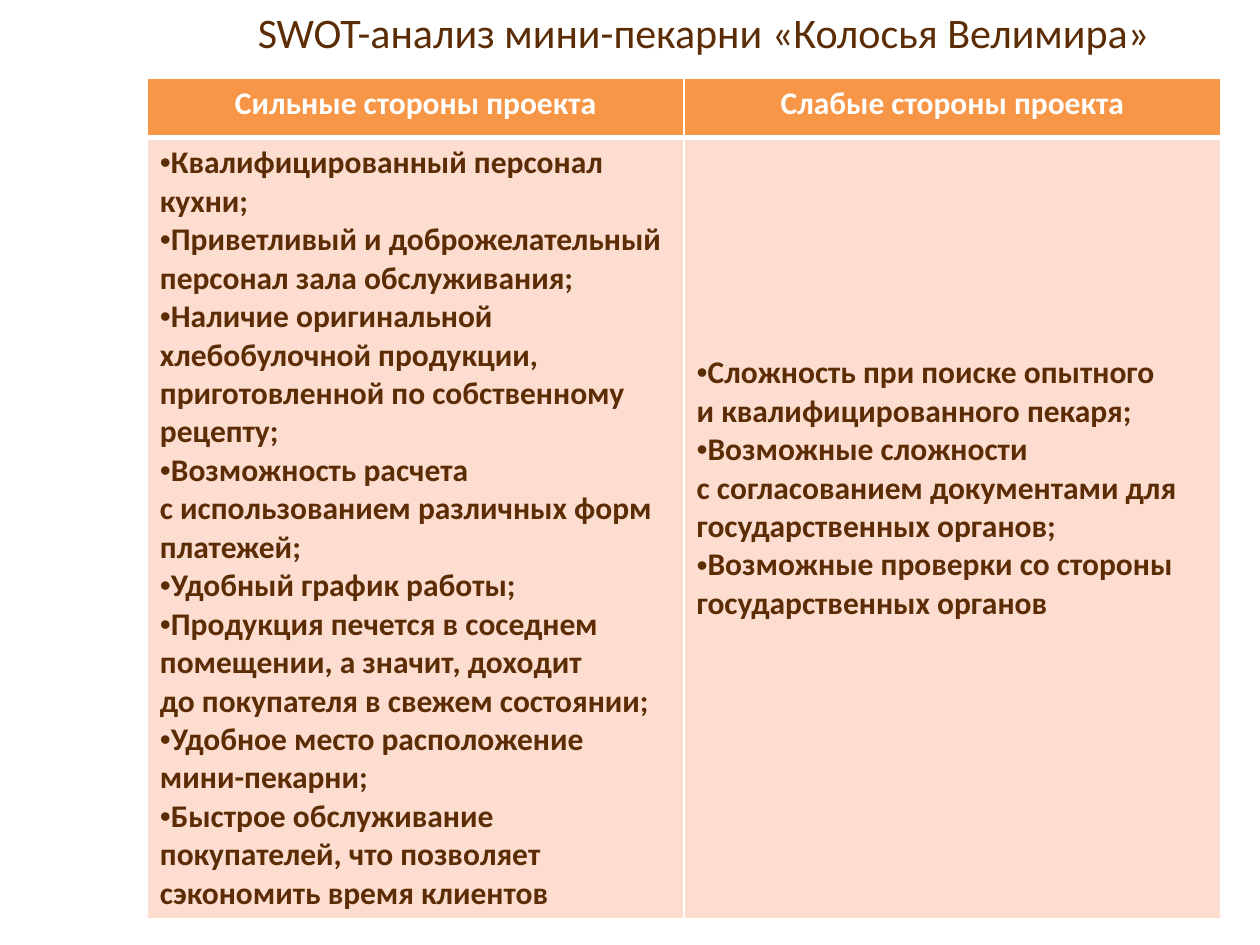
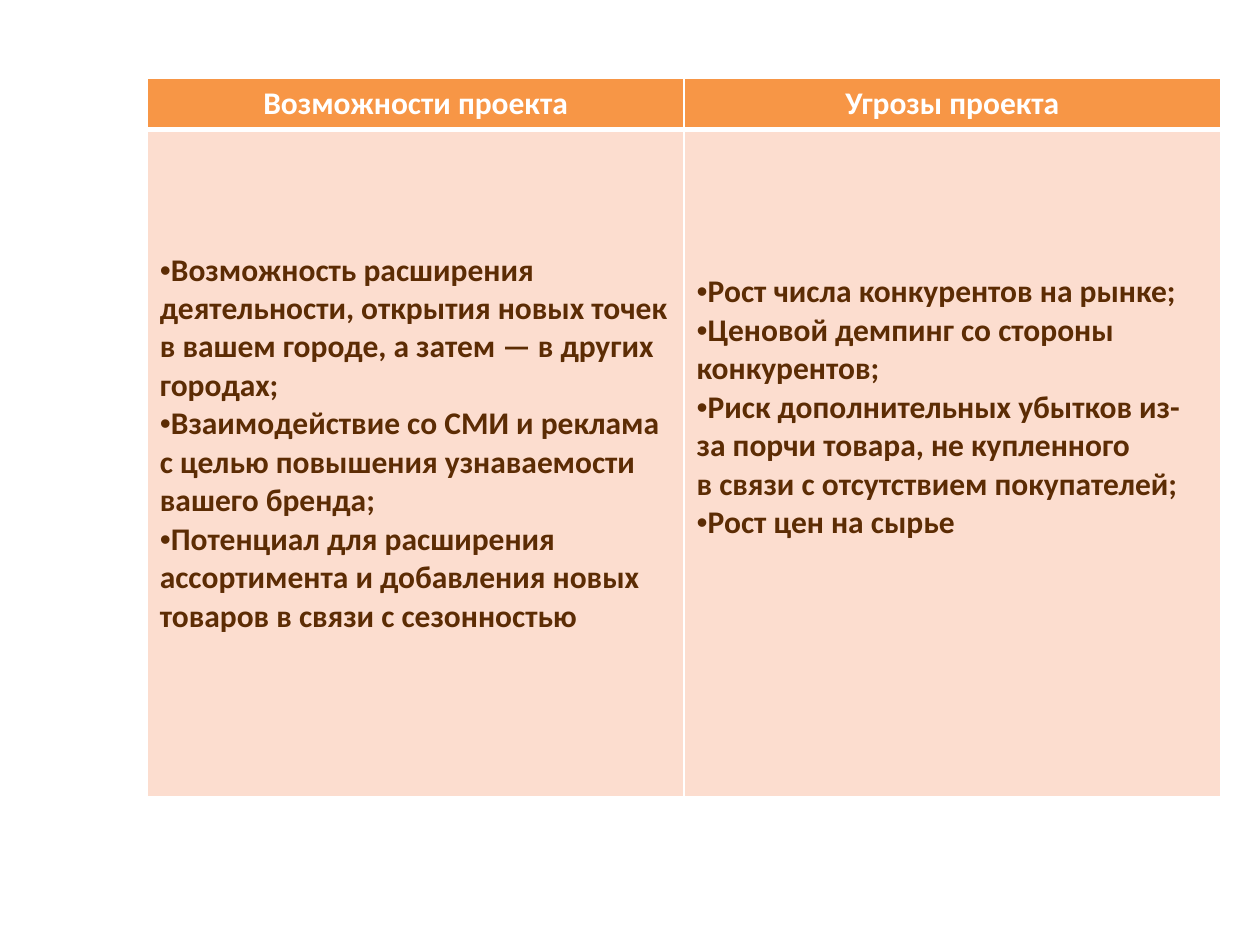
"""Build the two SWOT slides of a small bakery project."""
from itertools import pairwise
from lxml.etree import SubElement
from pptx import Presentation
from pptx.dml.color import RGBColor
from pptx.enum.text import MSO_ANCHOR, MSO_AUTO_SIZE, PP_ALIGN
from pptx.oxml import parse_xml
from pptx.oxml.ns import nsdecls, qn
from pptx.util import Cm, Pt

SLIDES = [
    {
        "title": "SWOT-анализ мини-пекарни «Колосья Велимира»",
        "rows": (1.19, 15.67),
        "columns": [
            {"head": "Сильные стороны проекта", "top": 0.13, "items": [
                "Квалифицированный персонал кухни;",
                "Приветливый и доброжелательный персонал зала обслуживания;",
                "Наличие оригинальной хлебобулочной продукции, приготовленной по собственному рецепту;",
                "Возможность расчета с использованием различных форм платежей;",
                "Удобный график работы;",
                "Продукция печется в соседнем помещении, а значит, доходит до покупателя в свежем состоянии;",
                "Удобное место расположение мини-пекарни;",
                "Быстрое обслуживание покупателей, что позволяет сэкономить время клиентов",
            ]},
            {"head": "Слабые стороны проекта", "top": 4.36, "items": [
                "Сложность при поиске опытного и квалифицированного пекаря;",
                "Возможные сложности с согласованием документами для государственных органов;",
                "Возможные проверки со стороны государственных органов",
            ]},
        ],
    },
    {
        "title": None,
        "rows": (1.02, 13.46),
        "columns": [
            {"head": "Возможности проекта", "top": 2.45, "items": [
                "Возможность расширения деятельности, открытия новых точек в вашем городе, а затем — в других городах;",
                "Взаимодействие со СМИ и реклама с целью повышения узнаваемости вашего бренда;",
                "Потенциал для расширения ассортимента и добавления новых товаров в связи с сезонностью",
            ]},
            {"head": "Угрозы проекта", "top": 2.89, "items": [
                "Рост числа конкурентов на рынке;",
                "Ценовой демпинг со стороны конкурентов;",
                "Риск дополнительных убытков из-за порчи товара, не купленного в связи с отсутствием покупателей;",
                "Рост цен на сырье",
            ]},
        ],
    },
]

WHITE = RGBColor(0xFF, 0xFF, 0xFF)
BROWN = RGBColor(0x5C, 0x2C, 0x04)
ORANGE = RGBColor(0xF7, 0x96, 0x46)
PEACH = RGBColor(0xFC, 0xDD, 0xCF)

SLIDE_W, SLIDE_H = 25.4, 19.05
LEFT, TABLE_TOP, TABLE_W, TITLE_H = 2.97, 1.58, 21.64, 1.27
TITLE_FONT = {"name": "Calibri", "size": Pt(24), "bold": False}
CELL_FONT = {"name": "Calibri", "size": Pt(18), "bold": True}
THIN, THICK = 1, 3
TITLE_ONLY, BLANK = 5, 6
NBSP = chr(160)


def tie_short_words(text):
    words = text.split()
    tied = words[0]
    for prev, word in pairwise(words):
        keep = word == "—" or (len(prev) <= 2 and prev.isalpha())
        tied += (NBSP if keep else " ") + word
    return tied


def style(p, font, color):
    for name, value in font.items():
        setattr(p.font, name, value)
    p.font.color.rgb = color


def add_title(s, text):
    sp = s.shapes.title
    sp.left, sp.top = Cm(LEFT), Cm(0)
    sp.width, sp.height = Cm(SLIDE_W - LEFT), Cm(TITLE_H)
    tf = sp.text_frame
    tf.text = text
    tf.word_wrap = True
    tf.auto_size = MSO_AUTO_SIZE.NONE
    tf.vertical_anchor = MSO_ANCHOR.MIDDLE
    p = tf.paragraphs[0]
    p.alignment = PP_ALIGN.CENTER
    style(p, TITLE_FONT, BROWN)


def paint(cell, fill, top, bottom):
    cell.fill.solid()
    cell.fill.fore_color.rgb = fill
    tc_pr = cell._tc.get_or_add_tcPr()
    edges = {"lnL": THIN, "lnR": THIN, "lnT": top, "lnB": bottom}
    for i, (tag, width) in enumerate(edges.items()):
        tc_pr.insert(i, parse_xml(
            f'<a:{tag} {nsdecls("a")} w="{Pt(width)}"><a:solidFill>'
            f'<a:srgbClr val="{WHITE}"/></a:solidFill></a:{tag}>'))


def fill_head(cell, text):
    paint(cell, ORANGE, THIN, THICK)
    cell.text = text
    p = cell.text_frame.paragraphs[0]
    p.alignment = PP_ALIGN.CENTER
    style(p, CELL_FONT, WHITE)


def fill_list(cell, items, top):
    paint(cell, PEACH, THICK, THIN)
    cell.margin_top = Cm(top)
    cell.text = "\n".join(tie_short_words(item) for item in items)
    for p in cell.text_frame.paragraphs:
        p_pr = p._p.get_or_add_pPr()
        SubElement(p_pr, qn("a:buFont"), typeface="Arial")
        SubElement(p_pr, qn("a:buChar"), char="•")
        style(p, CELL_FONT, BROWN)


def add_swot_table(s, heights, columns):
    table = s.shapes.add_table(len(heights), len(columns), Cm(LEFT), Cm(TABLE_TOP),
                               Cm(TABLE_W), Cm(sum(heights))).table
    for row, height in zip(table.rows, heights):
        row.height = Cm(height)
    for i, column in enumerate(columns):
        fill_head(table.cell(0, i), column["head"])
        fill_list(table.cell(1, i), column["items"], column["top"])


def main():
    prs = Presentation()
    prs.slide_width, prs.slide_height = Cm(SLIDE_W), Cm(SLIDE_H)
    for content in SLIDES:
        layout = TITLE_ONLY if content["title"] else BLANK
        s = prs.slides.add_slide(prs.slide_layouts[layout])
        add_swot_table(s, content["rows"], content["columns"])
        if content["title"]:
            add_title(s, content["title"])
    prs.save("out.pptx")


if __name__ == "__main__":
    main()
